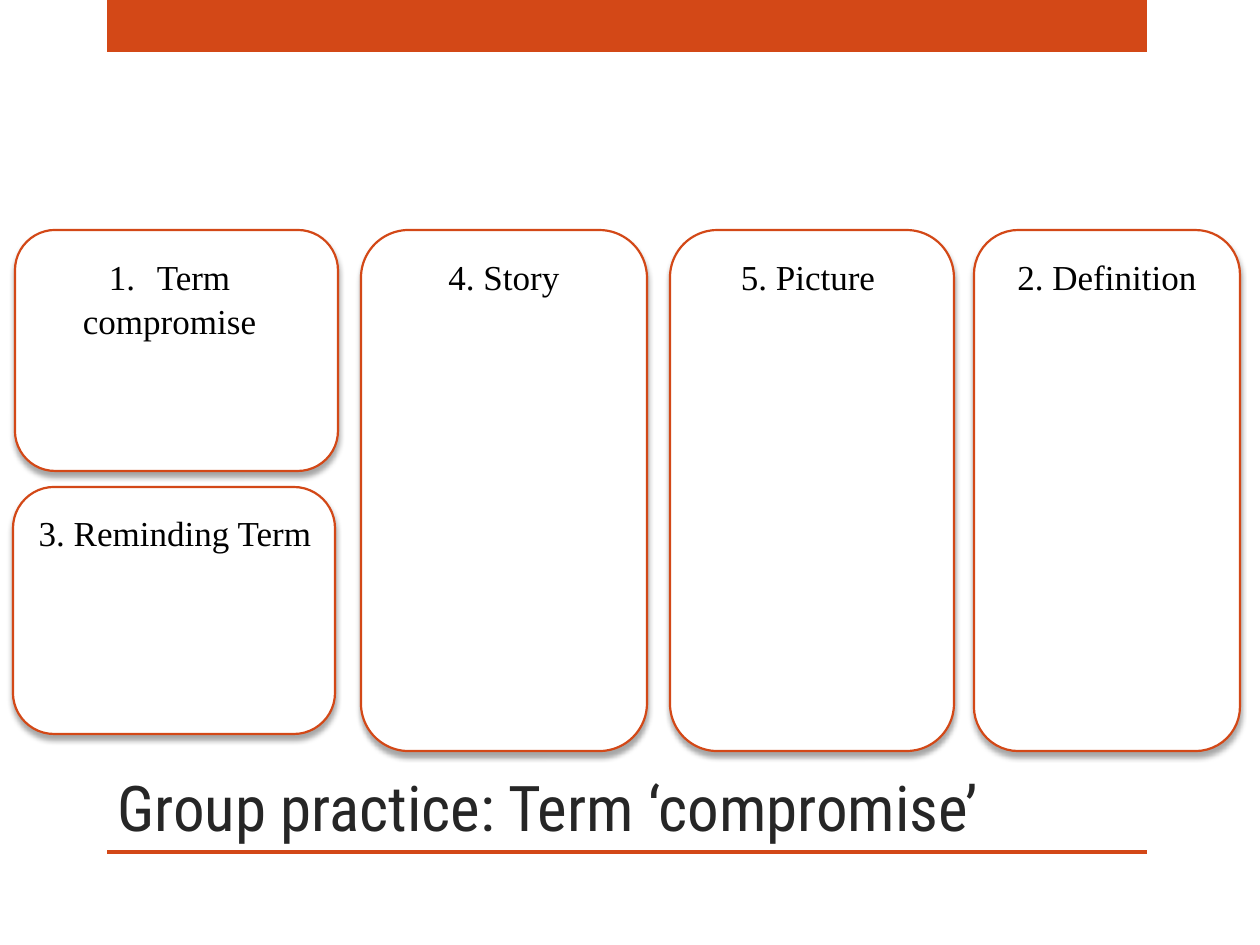
from lxml import etree
from pptx import Presentation, util as u
from pptx.dml.color import RGBColor
from pptx.enum import shapes, text
from pptx.oxml import parse_xml
from pptx.oxml.ns import qn

ACCENT, WHITE, BLACK, TITLE = "D34817", "FFFFFF", "000000", "262626"
TITLE_FONT, BODY_FONT = "Roboto Condensed", "Times New Roman"
SHADOW = (
    '<a:effectLst xmlns:a="http://schemas.openxmlformats.org/drawingml/2006/main">'
    '<a:outerShdw blurRad="38100" dist="38100" dir="5400000" rotWithShape="0">'
    '<a:srgbClr val="000000"><a:alpha val="35000"/></a:srgbClr>'
    '</a:outerShdw></a:effectLst>'
)


def px(length):
    return u.Emu(round(length * 914400 / 126))


def color(hex_string):
    return RGBColor.from_string(hex_string)


class SlideBuilder:
    def __init__(self, slide):
        self.slide = slide

    def shape(self, kind, box, fill):
        shape = self.slide.shapes.add_shape(kind, *map(px, box))
        shape.shadow.inherit = False
        shape.fill.solid()
        shape.fill.fore_color.rgb = color(fill)
        shape.line.fill.background()
        return shape

    def bar(self, *box):
        self.shape(shapes.MSO_SHAPE.RECTANGLE, box, ACCENT)

    def card(self, *box):
        """Add a white rounded box with an accent outline and soft shadow."""
        card = self.shape(shapes.MSO_SHAPE.ROUNDED_RECTANGLE, box, WHITE)
        card.line.color.rgb = color(ACCENT)
        card.line.width = u.Pt(1.25)
        properties = card._element.spPr
        properties.replace(properties.find(qn("a:effectLst")), parse_xml(SHADOW))

    def text_box(self, box, lines, font, size, fill):
        frame = self.slide.shapes.add_textbox(*map(px, box)).text_frame
        frame.word_wrap = True
        frame.text = "\n".join(lines)
        for paragraph in frame.paragraphs:
            paragraph.font.name = font
            paragraph.font.size = u.Pt(size)
            paragraph.font.color.rgb = color(fill)
        return frame

    def title(self, box, line):
        frame = self.text_box(box, [line], TITLE_FONT, 36, TITLE)
        frame.vertical_anchor = text.MSO_ANCHOR.BOTTOM

    def label(self, box, *lines, numbered=False):
        """Add centred card text, optionally numbering its first line."""
        frame = self.text_box(box, lines, BODY_FONT, 20, BLACK)
        for paragraph in frame.paragraphs:
            paragraph.alignment = text.PP_ALIGN.CENTER
            paragraph.line_spacing = 1.05
        if numbered:
            properties = frame.paragraphs[0]._p.get_or_add_pPr()
            properties.set("marL", str(px(48)))
            properties.set("indent", str(-px(48)))
            number = etree.Element(qn("a:buAutoNum"), type="arabicPeriod")
            properties.find(qn("a:lnSpc")).addnext(number)


def main():
    presentation = Presentation()
    presentation.slide_width, presentation.slide_height = px(1260), px(945)
    slide = presentation.slides.add_slide(presentation.slide_layouts[6])
    builder = SlideBuilder(slide)

    builder.bar(107, 0, 1040, 52)
    builder.bar(107, 850, 1040, 4)
    builder.title((105, 630, 935, 220), "Group practice: Term ‘compromise’")

    builder.card(15, 230, 323, 241)
    builder.card(13, 487, 322, 247)
    for left, width in ((361, 286), (670, 284), (974, 266)):
        builder.card(left, 230, width, 521)

    builder.label((35, 247, 269, 189), "Term", "compromise", numbered=True)
    builder.label((15, 503, 320, 123), "3. Reminding Term")
    builder.label((361, 247, 286, 146), "4. Story")
    builder.label((690, 247, 236, 55), "5. Picture")
    builder.label((974, 247, 266, 115), "2. Definition")

    presentation.save("out.pptx")


if __name__ == "__main__":
    main()
